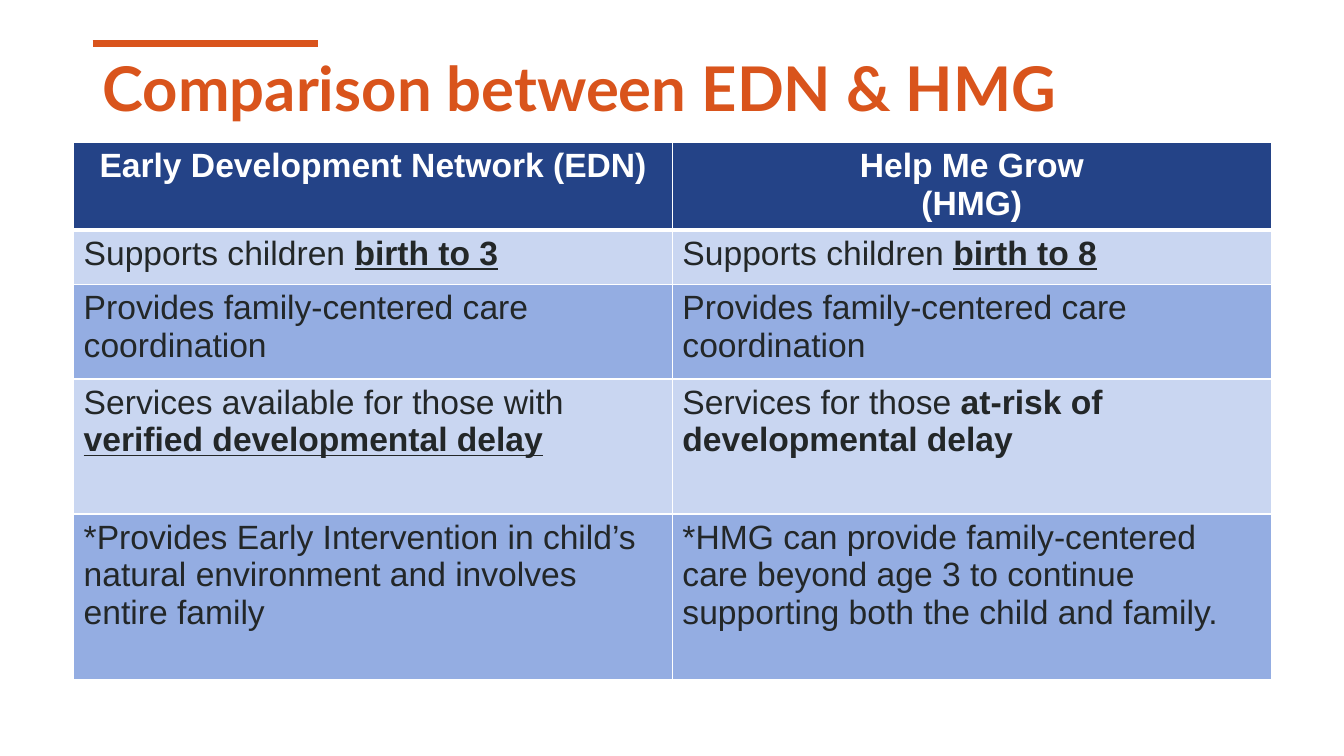
from lxml import etree
from pptx import Presentation
from pptx import util as u
from pptx.dml.color import RGBColor
from pptx.enum import shapes, text
from pptx.oxml.ns import qn

Pt = u.Pt

COLORS = {
    "orange": "D9541C",
    "navy": "244387",
    "pale": "C9D6F1",
    "blue": "94ADE2",
    "ink": "232728",
    "white": "FFFFFF",
}
PLAIN, BOLD, KEY = (False, False), (True, False), (True, True)
HEADERS = [["Early Development Network (EDN)"], ["Help Me Grow", "(HMG)"]]
COMPARISON = [
    [
        [("Supports children ", PLAIN), ("birth to 3", KEY)],
        [("Supports children ", PLAIN), ("birth to 8", KEY)],
    ],
    [[("Provides family-centered care coordination", PLAIN)]] * 2,
    [
        [("Services available for those with ", PLAIN),
         ("verified developmental delay", KEY)],
        [("Services for those ", PLAIN),
         ("at-risk of developmental delay", BOLD)],
    ],
    [
        [("*Provides Early Intervention in child’s natural environment "
          "and involves entire family", PLAIN)],
        [("*HMG can provide family-centered care beyond age 3 to continue "
          "supporting both the child and family.", PLAIN)],
    ],
]
ROW_HEIGHTS = [62.6, 38.9, 67.7, 96.5, 118]
COLUMN_WIDTH = 427.7


def color(name):
    return RGBColor.from_string(COLORS[name])


def style_font(font, name, size, color_name, bold, underline=False):
    font.name = name
    font.size = Pt(size)
    font.color.rgb = color(color_name)
    font.bold = bold
    font.underline = underline


def add_title(slide, wording):
    title = slide.shapes.title
    title.left, title.top, title.width, title.height = map(Pt, (66.2, 13, 828, 104.4))
    frame = title.text_frame
    frame.text = wording
    frame.word_wrap = True
    frame.vertical_anchor = text.MSO_ANCHOR.MIDDLE
    paragraph = frame.paragraphs[0]
    paragraph.alignment = text.PP_ALIGN.LEFT
    paragraph.line_spacing = 0.9
    style_font(paragraph.runs[0].font, "Lato", 44, "orange", True)


def add_accent_line(slide):
    line = slide.shapes.add_connector(
        shapes.MSO_CONNECTOR.STRAIGHT, Pt(66.2), Pt(31), Pt(226.8), Pt(31))
    line.line.color.rgb = color("orange")
    line.line.width = Pt(5)
    etree.SubElement(line._element.spPr, qn("a:effectLst"))


def paint_cell(cell, fill_name, bottom_width=1):
    cell.fill.solid()
    cell.fill.fore_color.rgb = color(fill_name)
    properties = cell._tc.get_or_add_tcPr()
    widths = {"a:lnL": 1, "a:lnR": 1, "a:lnT": 1, "a:lnB": bottom_width}
    for index, (side, width) in enumerate(widths.items()):
        border = etree.Element(qn(side), w=str(Pt(width)))
        fill = etree.SubElement(border, qn("a:solidFill"))
        etree.SubElement(fill, qn("a:srgbClr"), val=COLORS["white"])
        properties.insert(index, border)


def fill_header(cell, lines):
    paint_cell(cell, "navy", 3)
    cell.text_frame.text = "\n".join(lines)
    for paragraph in cell.text_frame.paragraphs:
        paragraph.alignment = text.PP_ALIGN.CENTER
        style_font(paragraph.runs[0].font, "Arial", 24, "white", True)


def fill_body(cell, pieces, fill_name):
    paint_cell(cell, fill_name)
    paragraph = cell.text_frame.paragraphs[0]
    for wording, (bold, underline) in pieces:
        run = paragraph.add_run()
        run.text = wording
        style_font(run.font, "Arial", 24, "ink", bold, underline)


def add_comparison_table(slide):
    table = slide.shapes.add_table(
        len(ROW_HEIGHTS), len(HEADERS), Pt(52.6), Pt(101.5),
        Pt(COLUMN_WIDTH * len(HEADERS)), Pt(sum(ROW_HEIGHTS))).table
    for column in table.columns:
        column.width = Pt(COLUMN_WIDTH)
    for row, height in zip(table.rows, ROW_HEIGHTS):
        row.height = Pt(height)
    for column, lines in enumerate(HEADERS):
        fill_header(table.cell(0, column), lines)
    for row, entries in enumerate(COMPARISON, 1):
        for column, pieces in enumerate(entries):
            fill_body(table.cell(row, column), pieces, "pale" if row % 2 else "blue")


def main():
    presentation = Presentation()
    presentation.slide_width, presentation.slide_height = Pt(960), Pt(540)
    slide = presentation.slides.add_slide(presentation.slide_layouts[5])
    add_accent_line(slide)
    add_title(slide, "Comparison between EDN & HMG")
    add_comparison_table(slide)
    presentation.save("out.pptx")


if __name__ == "__main__":
    main()
